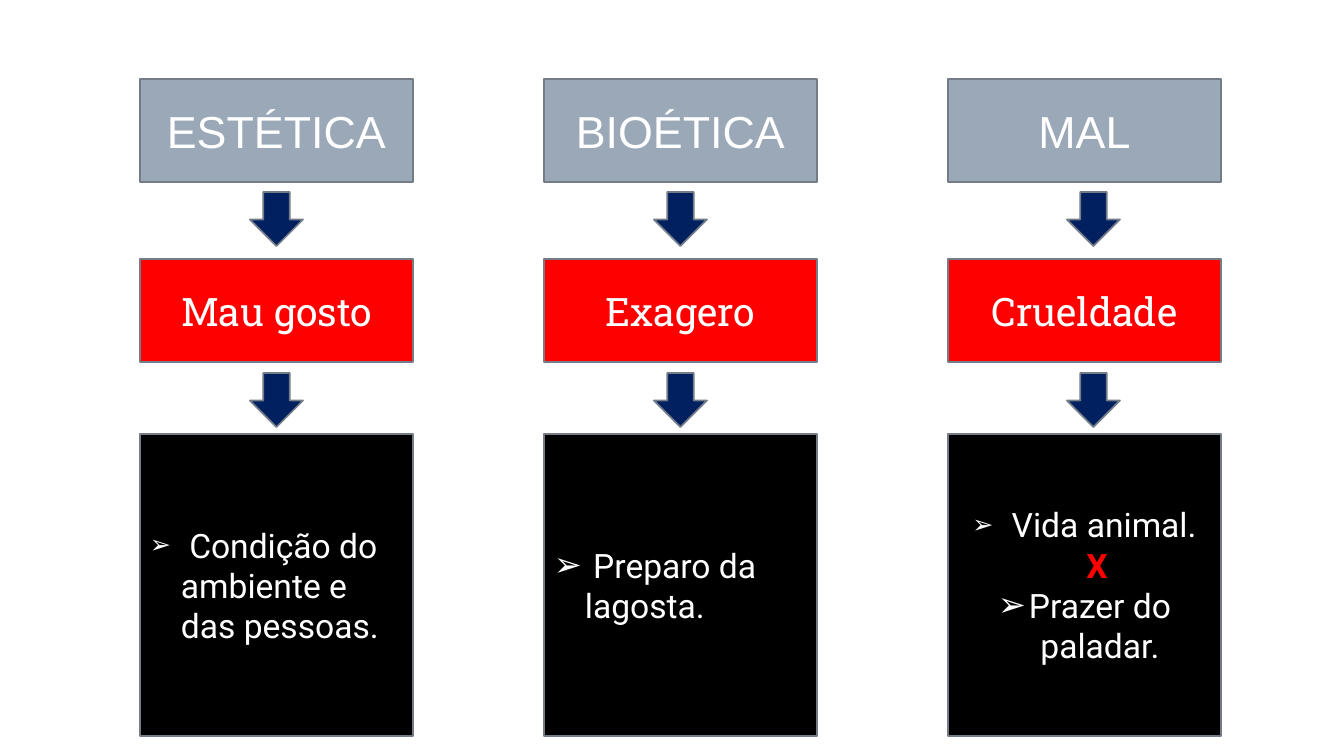
from lxml import etree
from pptx import Presentation
from pptx.dml.color import RGBColor
from pptx.enum.shapes import MSO_SHAPE
from pptx.enum.text import MSO_ANCHOR, PP_ALIGN
from pptx.oxml.ns import qn
from pptx.util import Pt

RECTANGLE, DOWN_ARROW = MSO_SHAPE.RECTANGLE, MSO_SHAPE.DOWN_ARROW
LEFT, CENTER = PP_ALIGN.LEFT, PP_ALIGN.CENTER
MIDDLE = MSO_ANCHOR.MIDDLE

EMU_PER_PX = 914400 / 100.8
COLORS = {
    "heading": "9BA8B7",
    "verdict": "FF0000",
    "reason": "000000",
    "arrow": "002060",
    "outline": "737C87",
    "text": "FFFFFF",
    "versus": "FF0000",
}


def px(length):
    return round(length * EMU_PER_PX)


def color(name):
    return RGBColor.from_string(COLORS[name])


class FlowSlide:
    """Holds the slide and draws its boxes, arrows and text in one style."""

    def __init__(self, slide):
        self.slide = slide

    def shape(self, kind, left, top, width, height, fill):
        shape = self.slide.shapes.add_shape(
            kind, px(left), px(top), px(width), px(height))
        shape.shadow.inherit = False
        shape.fill.solid()
        shape.fill.fore_color.rgb = color(fill)
        shape.line.color.rgb = color("outline")
        shape.line.width = Pt(1.25)
        return shape

    def box(self, left, top, height, fill):
        """Draw a column-wide box and return its text frame."""
        frame = self.shape(RECTANGLE, left, top, BOX_WIDTH, height, fill).text_frame
        frame.word_wrap = True
        frame.vertical_anchor = MIDDLE
        return frame

    def arrow(self, left, top):
        self.shape(DOWN_ARROW, left, top, 53, 54, "arrow")

    def set_text(self, paragraph, text, font, size, align=CENTER, ink="text", bold=False):
        paragraph.text = text
        paragraph.alignment = align
        paragraph.font.name = font
        paragraph.font.size = Pt(size)
        paragraph.font.bold = bold
        paragraph.font.color.rgb = color(ink)

    def indent(self, paragraph, margin, bullet_percent=None):
        """Set the left margin; with a bullet size, hang a bullet in it."""
        properties = paragraph._p.get_or_add_pPr()
        properties.set("marL", str(px(margin)))
        properties.set("indent", str(px(-margin if bullet_percent else 0)))
        if bullet_percent:
            etree.SubElement(properties, qn("a:buSzPct"), val=str(bullet_percent * 1000))
            etree.SubElement(properties, qn("a:buFont"), typeface="Arial")
            etree.SubElement(properties, qn("a:buChar"), char="➢")

    def label(self, left, top, fill, text, font, size):
        frame = self.box(left, top, 103, fill)
        self.set_text(frame.paragraphs[0], text, font, size)

    def reasons(self, left, top, items, align):
        """Fill in the items; one without a bullet size is the versus mark."""
        frame = self.box(left, top, 302, "reason")
        for number, (text, bullet_percent) in enumerate(items):
            paragraph = frame.add_paragraph() if number else frame.paragraphs[0]
            if bullet_percent:
                self.indent(paragraph, 31, bullet_percent)
                self.set_text(paragraph, text, "Roboto", 24, align)
            else:
                self.indent(paragraph, 25)
                self.set_text(paragraph, text, "Roboto", 24, align, "versus", True)


FIRST_LEFT, COLUMN_STEP, BOX_WIDTH = 140, 404, 273
HEADING_TOP, VERDICT_TOP, REASON_TOP = 79, 259, 434
ARROW_TOPS = (192, 373)

# Heading, verdict, reasons with bullet size in percent, alignment, arrow offset
COLUMNS = [
    ("ESTÉTICA", "Mau gosto",
     [(" Condição do ambiente e das pessoas.", 75)], LEFT, 110),
    ("BIOÉTICA", "Exagero",
     [(" Preparo da lagosta.", 100)], LEFT, 110),
    ("MAL", "Crueldade",
     [(" Vida animal.", 75), ("X", None), ("Prazer do paladar.", 100)], CENTER, 119),
]


def main():
    presentation = Presentation()
    presentation.slide_width = px(1344)
    presentation.slide_height = px(756)
    blank = presentation.slide_layouts[6]
    flow = FlowSlide(presentation.slides.add_slide(blank))

    for number, (heading, verdict, items, align, arrow_offset) in enumerate(COLUMNS):
        left = FIRST_LEFT + number * COLUMN_STEP
        flow.label(left, HEADING_TOP, "heading", heading, "Arial", 32)
        flow.label(left, VERDICT_TOP, "verdict", verdict, "Roboto Slab", 28)
        flow.reasons(left, REASON_TOP, items, align)
        for top in ARROW_TOPS:
            flow.arrow(left + arrow_offset, top)

    presentation.save("out.pptx")


if __name__ == "__main__":
    main()
